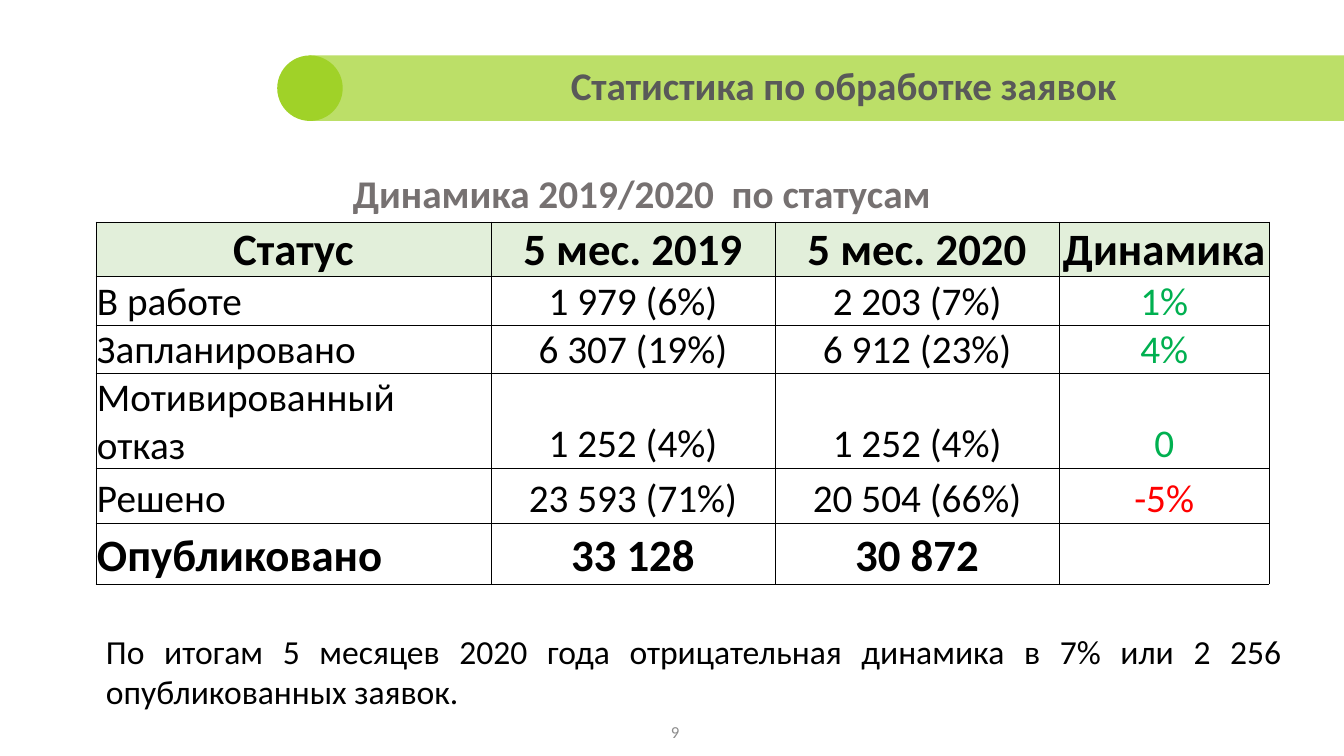
import pptx
import pptx.util
import pptx.dml.color
import pptx.enum.shapes
import pptx.enum.text
import pptx.oxml
import pptx.oxml.ns

Pt = pptx.util.Pt
Rgb = pptx.dml.color.RGBColor.from_string
Align = pptx.enum.text.PP_ALIGN
Anchor = pptx.enum.text.MSO_ANCHOR
Kind = pptx.enum.shapes.MSO_SHAPE

theme = {
    "font": "Calibri", "lime": "A0D228", "pale": "E2EFDA", "black": "000000",
    "title": "595959", "sub": "767171", "page": "8C8C8C",
    "up": "00B050", "down": "FF0000",
    "big": 32, "mid": 28, "note": 24, "small": 12,
}


def write(frame, text, size, color, bold=False, align=Align.LEFT):
    frame.word_wrap = True
    para = frame.paragraphs[0]
    para.text = text
    para.alignment = align
    font = para.font
    font.name = theme["font"]
    font.size = Pt(theme[size])
    font.bold = bold
    font.color.rgb = Rgb(theme[color])
    return para


def edge(cell):
    props = cell._tc.get_or_add_tcPr()
    for side in ("lnL", "lnR", "lnT", "lnB"):
        props.append(pptx.oxml.parse_xml(
            f'<a:{side} {pptx.oxml.ns.nsdecls("a")} w="{Pt(0.5)}"><a:solidFill>'
            f'<a:srgbClr val="{theme["black"]}"/></a:solidFill></a:{side}>'))


deck = pptx.Presentation()
deck.slide_width = Pt(960)
deck.slide_height = Pt(540)
slide = deck.slides.add_slide(deck.slide_layouts[5])
shapes = slide.shapes

bands = [(Kind.RECTANGLE, 221, 739, 70), (Kind.OVAL, 198, 46.8, 100)]
for kind, left, width, alpha in bands:
    band = shapes.add_shape(kind, Pt(left), Pt(39.6), Pt(width), Pt(46.8))
    band.shadow.inherit = False
    band.fill.solid()
    band.fill.fore_color.rgb = Rgb(theme["lime"])
    band.line.fill.background()
    if alpha < 100:
        tint = band._element.spPr.find(".//" + pptx.oxml.ns.qn("a:srgbClr"))
        tint.append(pptx.oxml.parse_xml(
            f'<a:alpha {pptx.oxml.ns.nsdecls("a")} val="{alpha * 1000}"/>'))

title = shapes.title
title.left, title.top, title.width, title.height = Pt(245), Pt(49), Pt(715), Pt(32.4)
title.text_frame.vertical_anchor = Anchor.TOP
title.text_frame.auto_size = pptx.enum.text.MSO_AUTO_SIZE.NONE
head = write(title.text_frame, "Статистика по обработке заявок", "mid", "title", True, Align.CENTER)
head.line_spacing = 0.7
shapes._spTree.append(title._element)

sub = shapes.add_textbox(Pt(245), Pt(117.4), Pt(693), Pt(41))
write(sub.text_frame, "Динамика 2019/2020  по статусам", "mid", "sub", True)

rows = [
    ("Статус", "5 мес. 2019", "5 мес. 2020", "Динамика"),
    ("В работе", "1 979 (6%)", "2 203 (7%)", "1%"),
    ("Запланировано", "6 307 (19%)", "6 912 (23%)", "4%"),
    ("Мотивированный отказ", "1 252 (4%)", "1 252 (4%)", "0"),
    ("Решено", "23 593 (71%)", "20 504 (66%)", "-5%"),
    ("Опубликовано", "33 128", "30 872", ""),
]
widths = [282, 203, 203, 150]
heights = [35.3, 33.8, 33.8, 41, 39.6, 43.2]
last = len(rows) - 1

grid = shapes.add_table(len(rows), len(widths), Pt(68.6), Pt(158.6),
                        Pt(sum(widths)), Pt(sum(heights))).table
grid.horz_banding = False
for col, width in zip(grid.columns, widths):
    col.width = Pt(width)
for r, row in enumerate(rows):
    grid.rows[r].height = Pt(heights[r])
    strong = r in (0, last)
    for c, text in enumerate(row):
        cell = grid.cell(r, c)
        cell.vertical_anchor = Anchor.BOTTOM
        cell.margin_left = cell.margin_right = cell.margin_top = Pt(0.7)
        cell.margin_bottom = 0
        edge(cell)
        if r == 0:
            cell.fill.solid()
            cell.fill.fore_color.rgb = Rgb(theme["pale"])
        else:
            cell.fill.background()
        color = "black"
        if c == 3 and r > 0:
            color = "down" if text.startswith("-") else "up"
        align = Align.LEFT if c == 0 and r > 0 else Align.CENTER
        write(cell.text_frame, text, "big" if strong else "mid", color, strong, align)

note = shapes.add_textbox(Pt(68.6), Pt(447), Pt(854), Pt(65.5))
write(note.text_frame,
      "По итогам 5 месяцев 2020 года отрицательная динамика в 7% или 2 256 опубликованных заявок.",
      "note", "black", align=Align.JUSTIFY)

page = shapes.add_textbox(Pt(473), Pt(512), Pt(13.7), Pt(21))
page.text_frame.margin_left = 0
page.text_frame.margin_right = Pt(1.5)
page.text_frame.vertical_anchor = Anchor.MIDDLE
write(page.text_frame, "9", "small", "page", align=Align.RIGHT)

deck.save("out.pptx")
